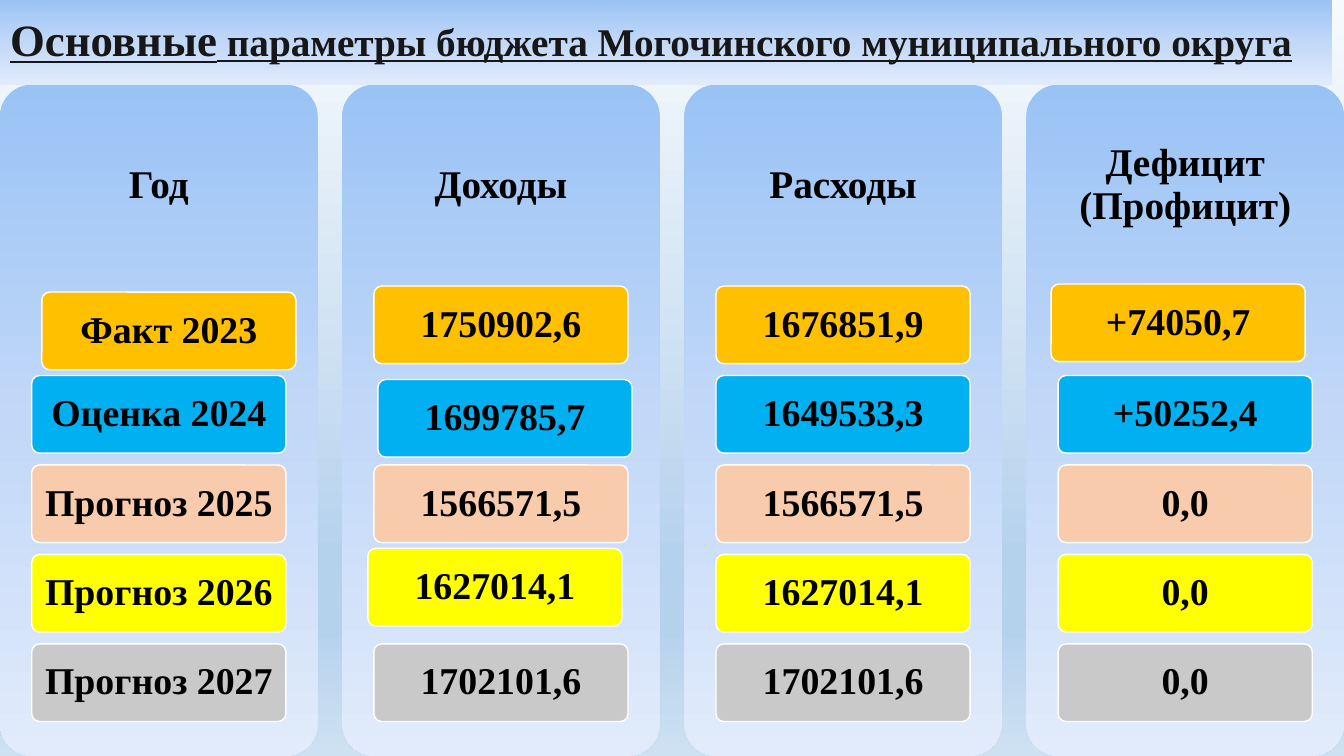
import pptx
import pptx.util
import pptx.dml.color
import pptx.enum.shapes
import pptx.enum.text
import pptx.oxml.ns
import lxml.etree

WIDTH, HEIGHT = 13.33, 7.5
TITLE_WIDTH, TITLE_HEIGHT = 13.21, 0.84
PANEL_WIDTH, HEADER_SHARE = 3.15, 0.3
CARD_WIDTH_SHARE, CARD_HEIGHT, CARD_PITCH = 0.8, 0.77, 0.8875
FONT = "Times New Roman"
PANEL_STOPS = [(0, "9AC3F5"), (50, "C2D8F8"), (100, "E1EBFB")]
PAGE_STOPS = [(0, "F7FAFD"), (74, "B5D2EC"), (83, "B5D2EC"), (100, "CEE1F2")]
CARD_COLOURS = ["FFC000", "00B0F0", "F8CBAD", "FFFF00", "C9C9C9"]
TITLE_SPANS = [("Основные", 32), (" параметры бюджета Могочинского муниципального округа", 28)]
COLUMNS = [
    ("Год", ["Факт 2023", "Оценка 2024", "Прогноз 2025", "Прогноз 2026", "Прогноз 2027"]),
    ("Доходы", ["1750902,6", "1699785,7", "1566571,5", "1627014,1", "1702101,6"]),
    ("Расходы", ["1676851,9", "1649533,3", "1566571,5", "1627014,1", "1702101,6"]),
    ("Дефицит (Профицит)", ["+74050,7", "+50252,4", "0,0", "0,0", "0,0"]),
]
CARD_SHIFTS = {(0, 0): (0.1, 0.06), (1, 1): (0.04, 0.04), (1, 3): (-0.06, -0.06), (3, 0): (-0.07, -0.02)}


def colour(value):
    return pptx.dml.color.RGBColor.from_string(value)


def inches(*lengths):
    return [pptx.util.Inches(length) for length in lengths]


def apply(target, values):
    for name, value in values.items():
        setattr(target, name, value)


def paint_gradient(fill, owner, stops):
    qn = pptx.oxml.ns.qn
    fill.gradient()
    fill.gradient_angle = 270
    stop_list = next(owner.iter(qn("a:gsLst")))
    for stop in list(stop_list):
        stop_list.remove(stop)
    for position, value in stops:
        stop = lxml.etree.SubElement(stop_list, qn("a:gs"), pos=str(position * 1000))
        lxml.etree.SubElement(stop, qn("a:srgbClr"), val=value)


def write_text(box, spans, align, margins, value="000000", underline=None):
    frame = box.text_frame
    side, edge = inches(*margins)
    apply(frame, {
        "word_wrap": True,
        "auto_size": pptx.enum.text.MSO_AUTO_SIZE.NONE,
        "vertical_anchor": pptx.enum.text.MSO_ANCHOR.MIDDLE,
        "margin_left": side, "margin_right": side,
        "margin_top": edge, "margin_bottom": edge,
    })
    para = frame.paragraphs[0]
    apply(para, {"alignment": align, "line_spacing": 0.9, "space_before": pptx.util.Pt(0)})
    for text, size in spans:
        span = para.add_run()
        span.text = text
        apply(span.font, {"name": FONT, "size": pptx.util.Pt(size), "bold": True, "underline": underline})
        span.font.color.rgb = colour(value)


def add_rounded(page, left, top, width, height):
    shape = page.shapes.add_shape(
        pptx.enum.shapes.MSO_SHAPE.ROUNDED_RECTANGLE, *inches(left, top, width, height))
    shape.adjustments[0] = 0.1
    shape.shadow.inherit = False
    return shape


def add_title(page, left, top, width, height):
    title = page.shapes.title
    apply(title, dict(zip(("left", "top", "width", "height"), inches(left, top, width, height))))
    paint_gradient(title.fill, title.element, PANEL_STOPS)
    write_text(title, TITLE_SPANS, pptx.enum.text.PP_ALIGN.LEFT, (0.1, 0.05), "181717", True)


def add_card(page, left, top, width, height, text, value):
    card = add_rounded(page, left, top, width, height)
    card.fill.solid()
    card.fill.fore_color.rgb = colour(value)
    card.line.color.rgb = colour("FFFFFF")
    card.line.width = pptx.util.Pt(1)
    write_text(card, [(text, 27)], pptx.enum.text.PP_ALIGN.CENTER, (0.07, 0.06))


def add_column(page, left, top, width, height, heading, entries, shifts):
    panel = add_rounded(page, left, top, width, height)
    paint_gradient(panel.fill, panel.element, PANEL_STOPS)
    panel.line.fill.background()
    header_height = height * HEADER_SHARE
    header = page.shapes.add_textbox(*inches(left, top, width, header_height))
    write_text(header, [(heading, 28)], pptx.enum.text.PP_ALIGN.CENTER, (0.12, 0.12))
    card_width = width * CARD_WIDTH_SHARE
    card_left = left + (width - card_width) / 2
    for row, (text, value) in enumerate(zip(entries, CARD_COLOURS)):
        across, down = shifts.get(row, (0, 0))
        card_top = top + header_height + row * CARD_PITCH
        add_card(page, card_left + across, card_top + down, card_width, CARD_HEIGHT, text, value)


def add_columns(page, left, top, width, height):
    pitch = (width - PANEL_WIDTH) / (len(COLUMNS) - 1)
    for index, (heading, entries) in enumerate(COLUMNS):
        shifts = {row: shift for (column, row), shift in CARD_SHIFTS.items() if column == index}
        add_column(page, left + index * pitch, top, PANEL_WIDTH, height, heading, entries, shifts)


def main():
    deck = pptx.Presentation()
    deck.slide_width, deck.slide_height = inches(WIDTH, HEIGHT)
    page = deck.slides.add_slide(deck.slide_layouts[5])
    paint_gradient(page.background.fill, page.element, PAGE_STOPS)
    add_title(page, 0, 0, TITLE_WIDTH, TITLE_HEIGHT)
    add_columns(page, 0, TITLE_HEIGHT, WIDTH, HEIGHT - TITLE_HEIGHT)
    deck.save("out.pptx")


if __name__ == "__main__":
    main()
